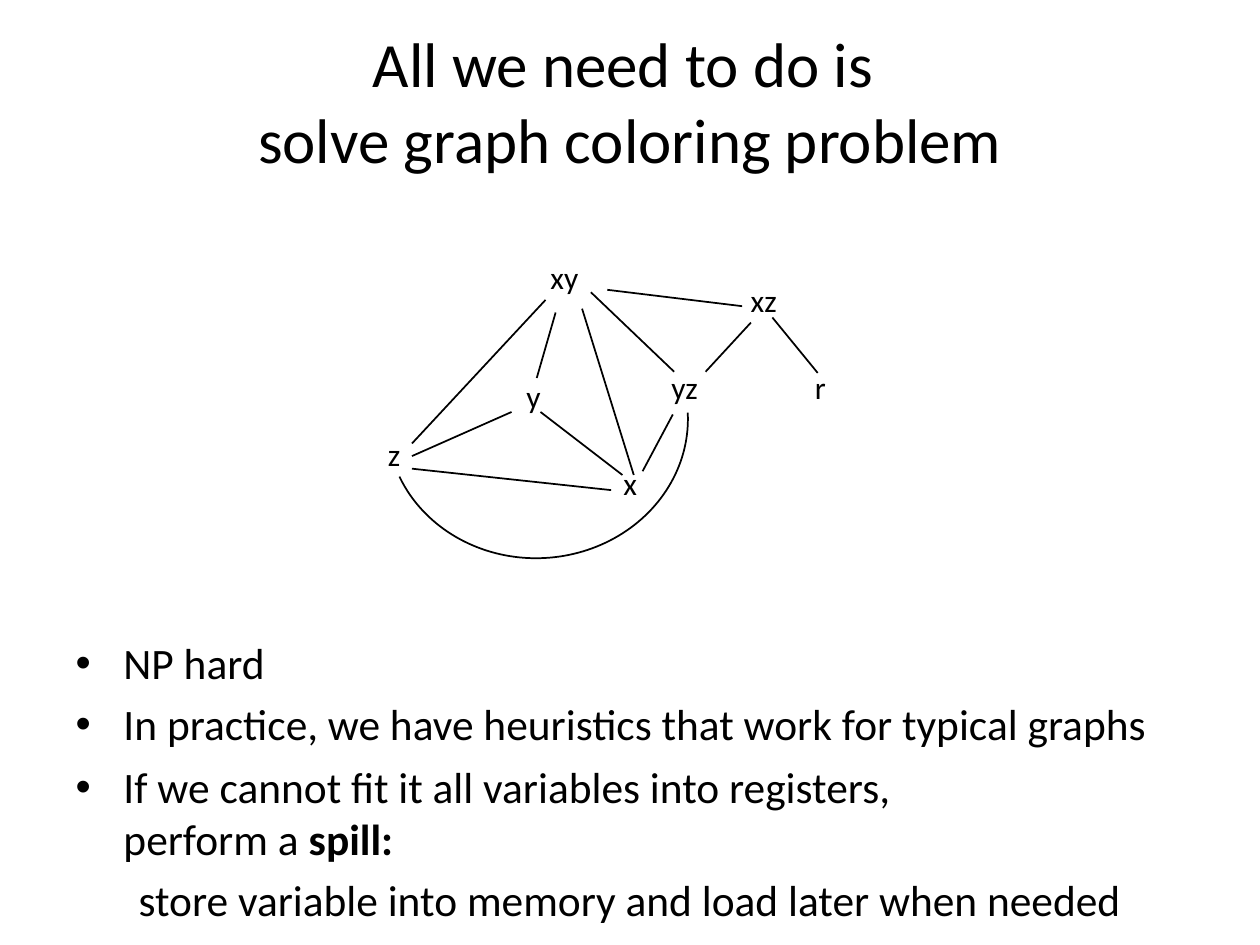
from pptx import Presentation
from pptx import util as u
from pptx.dml.color import RGBColor
from pptx.enum import shapes, text
from pptx.oxml.ns import qn
from lxml import etree

FONT = "Calibri"
BLACK = "000000"

NODES = {
    "y": (4.08, 2.94, 0.51),
    "yz": (5.23, 2.87, 0.66),
    "x": (4.85, 3.63, 0.5),
    "z": (2.98, 3.4, 0.48),
    "xz": (5.86, 2.18, 0.66),
    "xy": (4.27, 2, 0.68),
    "r": (6.37, 2.87, 0.46),
}
EDGES = [
    (4.62, 2.45, 5.03, 3.77),  # xy - x
    (4.85, 3.89, 3.27, 3.72),  # x - z
    (4.29, 3.27, 4.94, 3.77),  # y - x
    (4.41, 2.48, 4.26, 3),     # xy - y
    (3.27, 3.62, 4.06, 3.27),  # z - y
    (4.33, 2.38, 3.27, 3.52),  # xy - z
    (4.69, 2.32, 5.35, 2.95),  # xy - yz
    (5.34, 3.29, 5.1, 3.74),   # yz - x
    (4.82, 2.3, 5.89, 2.43),   # xy - xz
    (5.96, 2.56, 5.6, 2.95),   # xz - yz
    (6.13, 2.52, 6.49, 2.96),  # xz - r
]


def color(value):
    return RGBColor.from_string(value)


def place(sp, left, top, width, height):
    sp.left, sp.top = u.Inches(left), u.Inches(top)
    sp.width, sp.height = u.Inches(width), u.Inches(height)


def add_run(p, words, size, bold=False):
    r = p.add_run()
    r.text = words
    r.font.name, r.font.size, r.font.bold = FONT, u.Pt(size), bold
    r.font.color.rgb = color(BLACK)


def set_line(sp):
    sp.line.color.rgb = color(BLACK)
    sp.line.width = u.Pt(1)


def set_indent(p, margin, indent):
    pPr = p._p.get_or_add_pPr()
    pPr.set("marL", str(u.Inches(margin)))
    pPr.set("indent", str(u.Inches(indent)))
    return pPr


def add_bullet(p):
    pPr = set_indent(p, 0.38, -0.38)
    etree.SubElement(pPr, qn("a:buChar")).set("char", "•")


def add_tab_stop(p, position):
    """Drop the bullet and start the text at a tab stop."""
    pPr = set_indent(p, 0, 0)
    etree.SubElement(pPr, qn("a:buNone"))
    tabs = etree.SubElement(pPr, qn("a:tabLst"))
    etree.SubElement(tabs, qn("a:tab"), pos=str(u.Inches(position)), algn="l")


def fill_title(sp):
    place(sp, 0.5, 0.17, 9, 1.25)
    tf = sp.text_frame
    tf.auto_size = text.MSO_AUTO_SIZE.NONE
    tf.vertical_anchor = text.MSO_ANCHOR.MIDDLE
    p = tf.paragraphs[0]
    p.alignment = text.PP_ALIGN.CENTER
    add_run(p, "All we need to do is ", 36)
    p.add_line_break()
    add_run(p, "solve graph coloring problem", 36)


def fill_body(sp):
    place(sp, 0.5, 5, 9.33, 2.08)
    tf = sp.text_frame
    tf.auto_size = text.MSO_AUTO_SIZE.NONE
    size = 24.8
    p = tf.paragraphs[0]
    for words in ("NP hard",
                  "In practice, we have heuristics that work for typical graphs",
                  "If we cannot fit it all variables into registers, "):
        add_bullet(p)
        add_run(p, words, size)
        last, p = p, tf.add_paragraph()
    last.add_line_break()
    add_run(last, "perform a ", size)
    add_run(last, "spill:", size, bold=True)
    add_tab_stop(p, 1)
    add_run(p, "\tstore variable into memory and load later when needed", size)


def add_node(graph, name, left, top, width):
    sp = graph.shapes.add_textbox(*map(u.Inches, (left, top, width, 0.62)))
    sp.text_frame.word_wrap = True
    add_run(sp.text_frame.paragraphs[0], name, 18)


def add_edge(graph, *ends):
    line = graph.shapes.add_connector(
        shapes.MSO_CONNECTOR.STRAIGHT, *map(u.Inches, ends))
    set_line(line)
    etree.SubElement(line._element.spPr, qn("a:effectLst"))


def add_arc_edge(graph):
    """Join z to yz around the outside of the graph."""
    arc = graph.shapes.add_shape(
        shapes.MSO_SHAPE.ARC, *map(u.Inches, (3.17, 2.14, 2.19, 2.39)))
    arc.adjustments[0], arc.adjustments[1] = 162, 42.39
    arc.rotation = 87.1
    arc.shadow.inherit = False
    arc.fill.background()
    set_line(arc)


def main():
    prs = Presentation()
    prs.slide_width, prs.slide_height = u.Inches(10), u.Inches(7.5)
    s = prs.slides.add_slide(prs.slide_layouts[1])
    fill_title(s.shapes.title)
    fill_body(s.placeholders[1])
    graph = s.shapes.add_group_shape()
    for name, box in NODES.items():
        add_node(graph, name, *box)
    for ends in EDGES:
        add_edge(graph, *ends)
    add_arc_edge(graph)
    prs.save("out.pptx")


if __name__ == "__main__":
    main()
